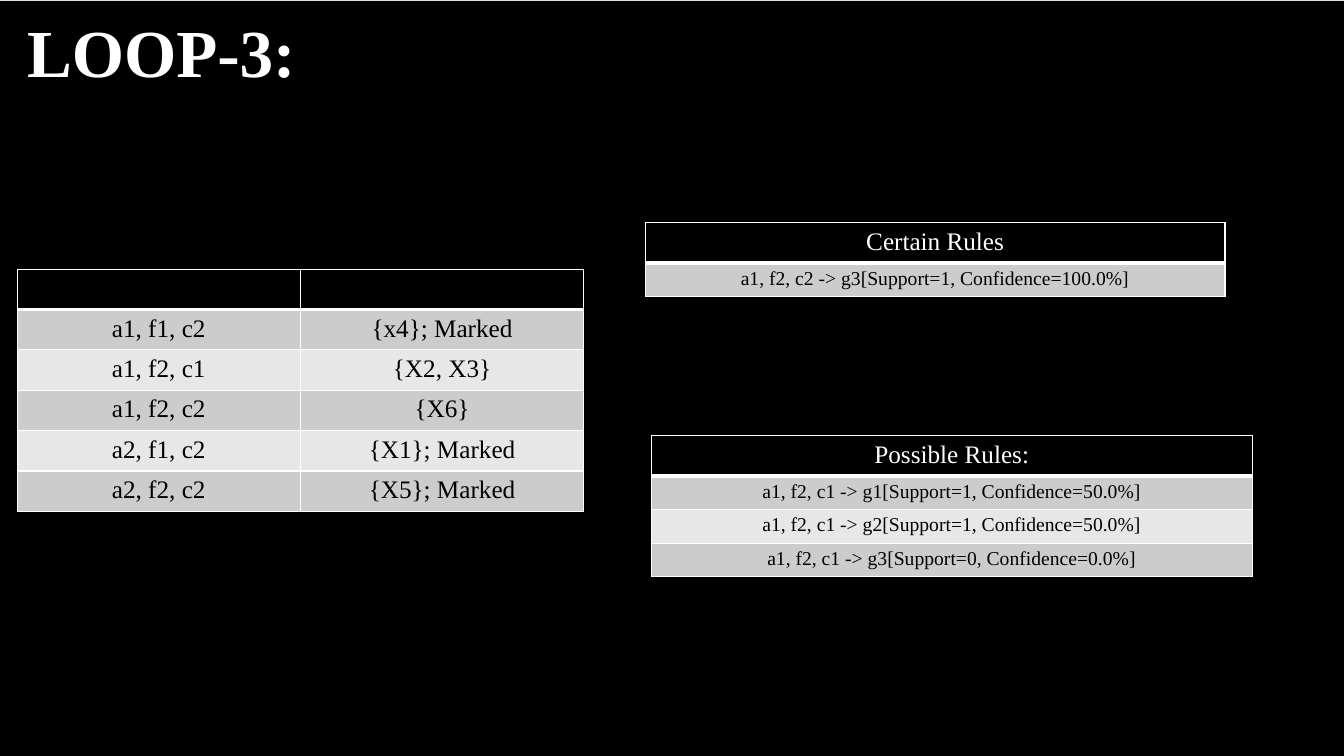
from dataclasses import dataclass

from lxml import etree
from pptx import Presentation
from pptx import util as u
from pptx.dml import color
from pptx.enum import shapes, text
from pptx.oxml import ns

COLORS = {"black": "000000", "white": "FFFFFF", "odd": "CCCCCC", "even": "E7E7E7"}
FONT = "Times New Roman"
HEADER_SIZE = 18
HEADER_HEIGHT = 0.4


@dataclass(frozen=True)
class RuleTable:
    left: float
    top: float
    width: float
    row_height: float
    body_size: int
    rows: tuple[tuple[str, ...], ...]


TABLES = (
    RuleTable(0.17, 2.67, 5.62, 0.4, 18, (
        ("", ""),
        ("a1, f1, c2", "{x4}; Marked"),
        ("a1, f2, c1", "{X2, X3}"),
        ("a1, f2, c2", "{X6}"),
        ("a2, f1, c2", "{X1}; Marked"),
        ("a2, f2, c2", "{X5}; Marked"),
    )),
    RuleTable(6.4, 2.21, 5.75, 0.33, 14, (
        ("Certain Rules",),
        ("a1, f2, c2 -> g3[Support=1, Confidence=100.0%]",),
    )),
    RuleTable(6.46, 4.32, 5.96, 0.33, 14, (
        ("Possible Rules:",),
        ("a1, f2, c1 -> g1[Support=1, Confidence=50.0%]",),
        ("a1, f2, c1 -> g2[Support=1, Confidence=50.0%]",),
        ("a1, f2, c1 -> g3[Support=0, Confidence=0.0%]",),
    )),
)


def rgb(name: str) -> color.RGBColor:
    return color.RGBColor.from_string(COLORS[name])


def add_run(paragraph, words: str, size: int, color_name: str, bold: bool = False) -> None:
    run = paragraph.add_run()
    run.text = words
    run.font.name = FONT
    run.font.size = u.Pt(size)
    run.font.bold = bold
    run.font.color.rgb = rgb(color_name)


def add_borders(cell, bottom_width: int) -> None:
    """Outline a cell in white; call before filling, as borders precede the fill."""
    properties = cell._tc.get_or_add_tcPr()
    for side in "LRTB":
        width = bottom_width if side == "B" else 1
        line = etree.SubElement(properties, ns.qn(f"a:ln{side}"), w=str(u.Pt(width)))
        fill = etree.SubElement(line, ns.qn("a:solidFill"))
        etree.SubElement(fill, ns.qn("a:srgbClr"), val=COLORS["white"])


def add_background(slide) -> None:
    shape = slide.shapes.add_shape(
        shapes.MSO_SHAPE.RECTANGLE, 0, u.Inches(0.01), u.Inches(13.33), u.Inches(7.5))
    shape.shadow.inherit = False
    shape.fill.solid()
    shape.fill.fore_color.rgb = rgb("black")
    shape.line.fill.background()


def add_heading(slide) -> None:
    shape = slide.shapes.add_textbox(
        u.Inches(0.17), u.Inches(0.05), u.Inches(3.31), u.Inches(0.91))
    shape.text_frame.word_wrap = True
    paragraph = shape.text_frame.paragraphs[0]
    paragraph.alignment = text.PP_ALIGN.JUSTIFY
    add_run(paragraph, "LOOP-3:", 48, "white", bold=True)


def add_rule_table(slide, item: RuleTable) -> None:
    row_count, column_count = len(item.rows), len(item.rows[0])
    height = HEADER_HEIGHT + (row_count - 1) * item.row_height
    table = slide.shapes.add_table(
        row_count, column_count, u.Inches(item.left), u.Inches(item.top),
        u.Inches(item.width), u.Inches(height)).table
    for r, row in enumerate(item.rows):
        header = r == 0
        table.rows[r].height = u.Inches(HEADER_HEIGHT if header else item.row_height)
        fill_name = "black" if header else ("odd" if r % 2 else "even")
        for c, words in enumerate(row):
            cell = table.cell(r, c)
            add_borders(cell, 3 if header else 1)
            cell.fill.solid()
            cell.fill.fore_color.rgb = rgb(fill_name)
            if words:
                paragraph = cell.text_frame.paragraphs[0]
                paragraph.alignment = text.PP_ALIGN.CENTER
                add_run(paragraph, words, HEADER_SIZE if header else item.body_size,
                        "white" if header else "black")


def main() -> None:
    presentation = Presentation()
    presentation.slide_width = u.Inches(13.33)
    presentation.slide_height = u.Inches(7.5)
    slide = presentation.slides.add_slide(presentation.slide_layouts[6])

    # Backdrop and heading
    add_background(slide)
    add_heading(slide)

    # Attribute sets, certain rules and possible rules
    for item in TABLES:
        add_rule_table(slide, item)

    presentation.save("out.pptx")


if __name__ == "__main__":
    main()
